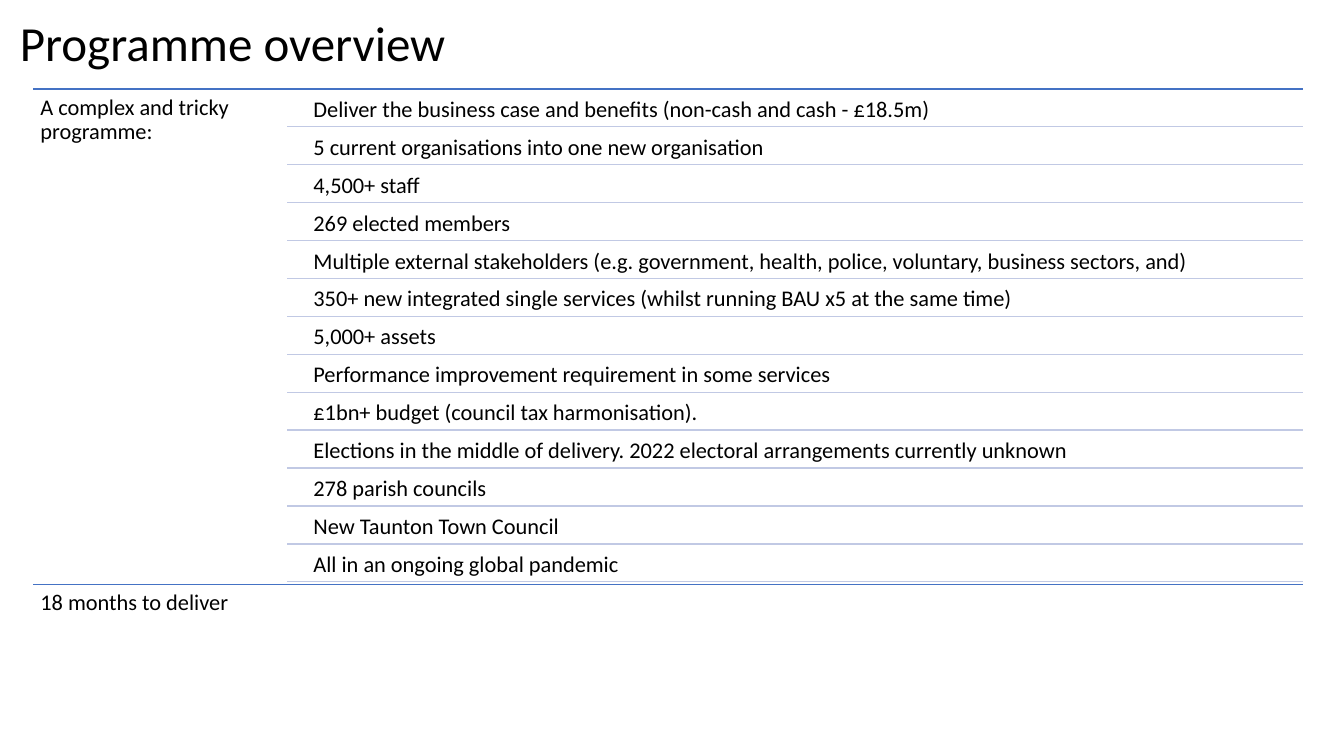
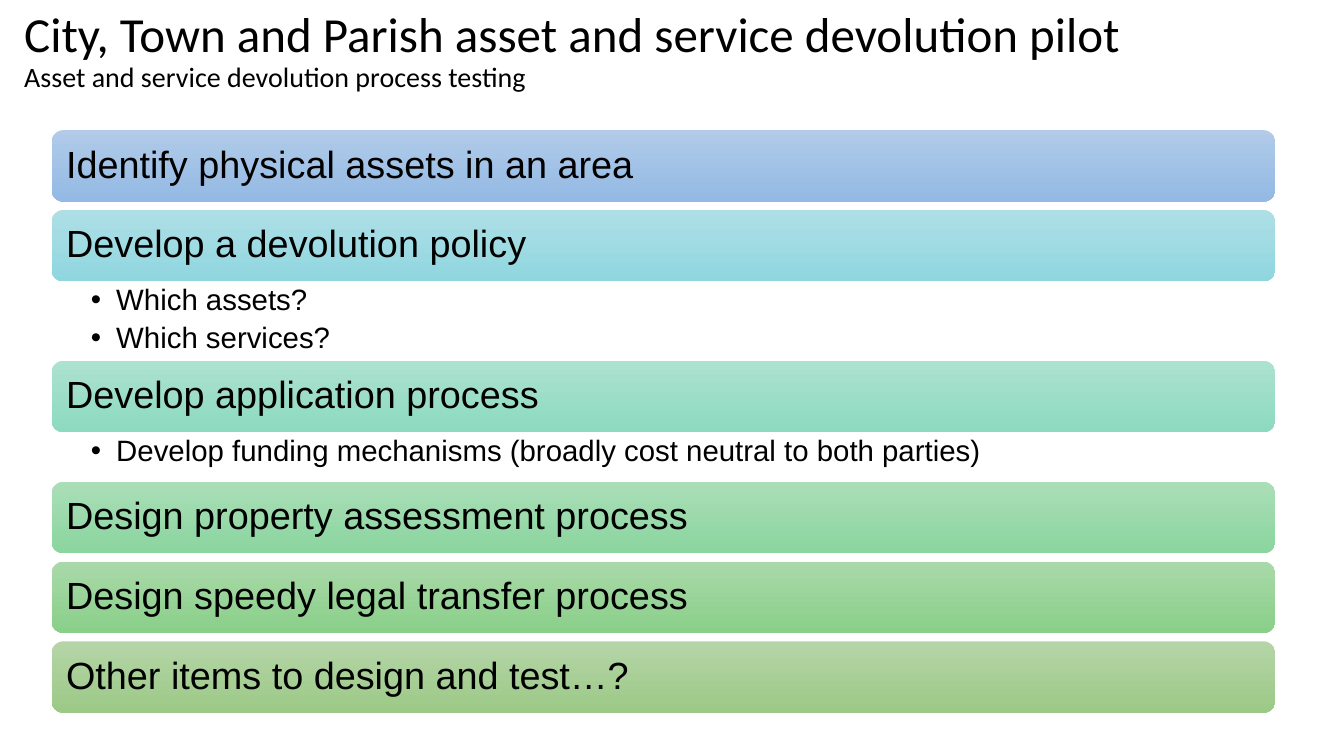
"""Build two slides: a programme overview list and a devolution process in bands."""
import lxml.etree
import pptx
import pptx.dml.color
import pptx.enum.shapes
import pptx.enum.text
import pptx.oxml.ns
import pptx.util

Cm = pptx.util.Cm
Pt = pptx.util.Pt
qn = pptx.oxml.ns.qn
ANCHOR = pptx.enum.text.MSO_ANCHOR

COLOURS = {"text": "000000", "rule": "4472C4", "row_rule": "C1C9E4"}
HEADING_FONT = "Calibri"
BAND_FONT = "Arial"

CHALLENGES = [
    "Deliver the business case and benefits (non-cash and cash - £18.5m)",
    "5 current organisations into one new organisation",
    "4,500+ staff",
    "269 elected members",
    "Multiple external stakeholders (e.g. government, health, police, voluntary, business sectors, and)",
    "350+ new integrated single services (whilst running BAU x5 at the same time)",
    "5,000+ assets",
    "Performance improvement requirement in some services",
    "£1bn+ budget (council tax harmonisation).",
    "Elections in the middle of delivery. 2022 electoral arrangements currently unknown",
    "278 parish councils",
    "New Taunton Town Council",
    "All in an ongoing global pandemic",
]

STEPS = [
    ("Identify physical assets in an area", ("B1CBE9", "93B9E4"), [], 0.21),
    ("Develop a devolution policy", ("AEDFE6", "90D6DF"),
     ["Which assets?", "Which services?"], 2.0),
    ("Develop application process", ("ACE2D0", "8DDAC1"),
     ["Develop funding mechanisms (broadly cost neutral to both parties)"], 1.25),
    ("Design property assessment process", ("AADEB8", "8BD59F"), [], 0.21),
    ("Design speedy legal transfer process", ("A9D9A9", "8ACF89"), [], 0.21),
    ("Other items to design and test…?", ("B5D5A7", "9CC987"), [], 0),
]


def rgb(value):
    return pptx.dml.color.RGBColor.from_string(value)


def set_frame(frame, insets, anchor=ANCHOR.TOP):
    frame.word_wrap = True
    frame.vertical_anchor = anchor
    frame.margin_left, frame.margin_top, frame.margin_right, frame.margin_bottom = map(Cm, insets)


def write_lines(frame, lines, font):
    for index, (wording, size) in enumerate(lines):
        paragraph = frame.add_paragraph() if index else frame.paragraphs[0]
        paragraph.alignment = pptx.enum.text.PP_ALIGN.LEFT
        paragraph.line_spacing = 0.9
        run = paragraph.add_run()
        run.text = wording
        run.font.size = Pt(size)
        run.font.name = font
        run.font.color.rgb = rgb(COLOURS["text"])


def add_text(slide, box, lines, font, insets, anchor=ANCHOR.TOP):
    frame = slide.shapes.add_textbox(*map(Cm, box)).text_frame
    set_frame(frame, insets, anchor)
    write_lines(frame, lines, font)
    return frame


def add_title(slide, left, height, lines):
    add_text(slide, (left, 0.3, 33, height), lines, HEADING_FONT,
             (0.25, 0.13, 0.25, 0.13), ANCHOR.MIDDLE)


def add_entry(slide, box, wording):
    add_text(slide, box, [(wording, 16)], HEADING_FONT, (0.18,) * 4)


def add_rule(slide, left, right, top, colour):
    rule = slide.shapes.add_connector(
        pptx.enum.shapes.MSO_CONNECTOR.STRAIGHT, Cm(left), Cm(top), Cm(right), Cm(top))
    rule.line.color.rgb = rgb(COLOURS[colour])
    rule.line.width = Pt(1)
    lxml.etree.SubElement(rule._element.spPr, qn("a:effectLst"))


def add_band(slide, box, wording, shades):
    band = slide.shapes.add_shape(
        pptx.enum.shapes.MSO_SHAPE.ROUNDED_RECTANGLE, *map(Cm, box))
    band.shadow.inherit = False
    band.line.fill.background()
    band.fill.gradient()
    band.fill.gradient_angle = 270
    for stop, shade in zip(band.fill.gradient_stops, shades):
        stop.color.rgb = rgb(shade)
    set_frame(band.text_frame, (0.28,) * 4, ANCHOR.MIDDLE)
    write_lines(band.text_frame, [(wording, 27)], BAND_FONT)


def add_bullets(slide, box, points):
    frame = add_text(slide, box, [(point, 21) for point in points], BAND_FONT,
                     (0.99, 0.1, 0.53, 0.1))
    for paragraph in frame.paragraphs:
        paragraph.space_after = Pt(4.5)
        properties = paragraph._p.get_or_add_pPr()
        properties.set("marL", str(Cm(0.64)))
        properties.set("indent", str(-Cm(0.64)))
        lxml.etree.SubElement(properties, qn("a:buFont"), typeface=BAND_FONT)
        lxml.etree.SubElement(properties, qn("a:buChar"), char="•")


def build_overview(slide):
    left, column, right = 0.84, 7.24, 32.84
    top, last_rule, bottom = 2.24, 14.66, 14.73
    pitch = (last_rule - top) / len(CHALLENGES)
    entry_left = column + 0.48

    add_title(slide, 0.25, 1.7, [("Programme overview", 35)])
    add_rule(slide, left, right, top, "rule")
    add_entry(slide, (left, top, column - left, bottom - top), "A complex and tricky programme:")
    for index, challenge in enumerate(CHALLENGES):
        row_top = top + index * pitch
        add_entry(slide, (entry_left, row_top + 0.05, right - entry_left, pitch - 0.05), challenge)
        add_rule(slide, column, right, row_top + pitch, "row_rule")
    add_rule(slide, left, right, bottom, "rule")
    add_entry(slide, (left, bottom, 20.42, 3.48), "18 months to deliver")


def build_process(slide):
    left, width, band_height = 1.3, 30.84, 1.8
    add_title(slide, 0.36, 2.03, [
        ("City, Town and Parish asset and service devolution pilot", 35),
        ("Asset and service devolution process testing", 20),
    ])
    top = 3.28
    for wording, shades, points, space_below in STEPS:
        add_band(slide, (left, top, width, band_height), wording, shades)
        top += band_height
        if points:
            add_bullets(slide, (left, top, width, space_below), points)
        top += space_below


def main():
    deck = pptx.Presentation()
    deck.slide_width, deck.slide_height = Cm(33.87), Cm(19.05)
    blank = deck.slide_layouts[6]
    for build in (build_overview, build_process):
        build(deck.slides.add_slide(blank))
    deck.save("out.pptx")


if __name__ == "__main__":
    main()
